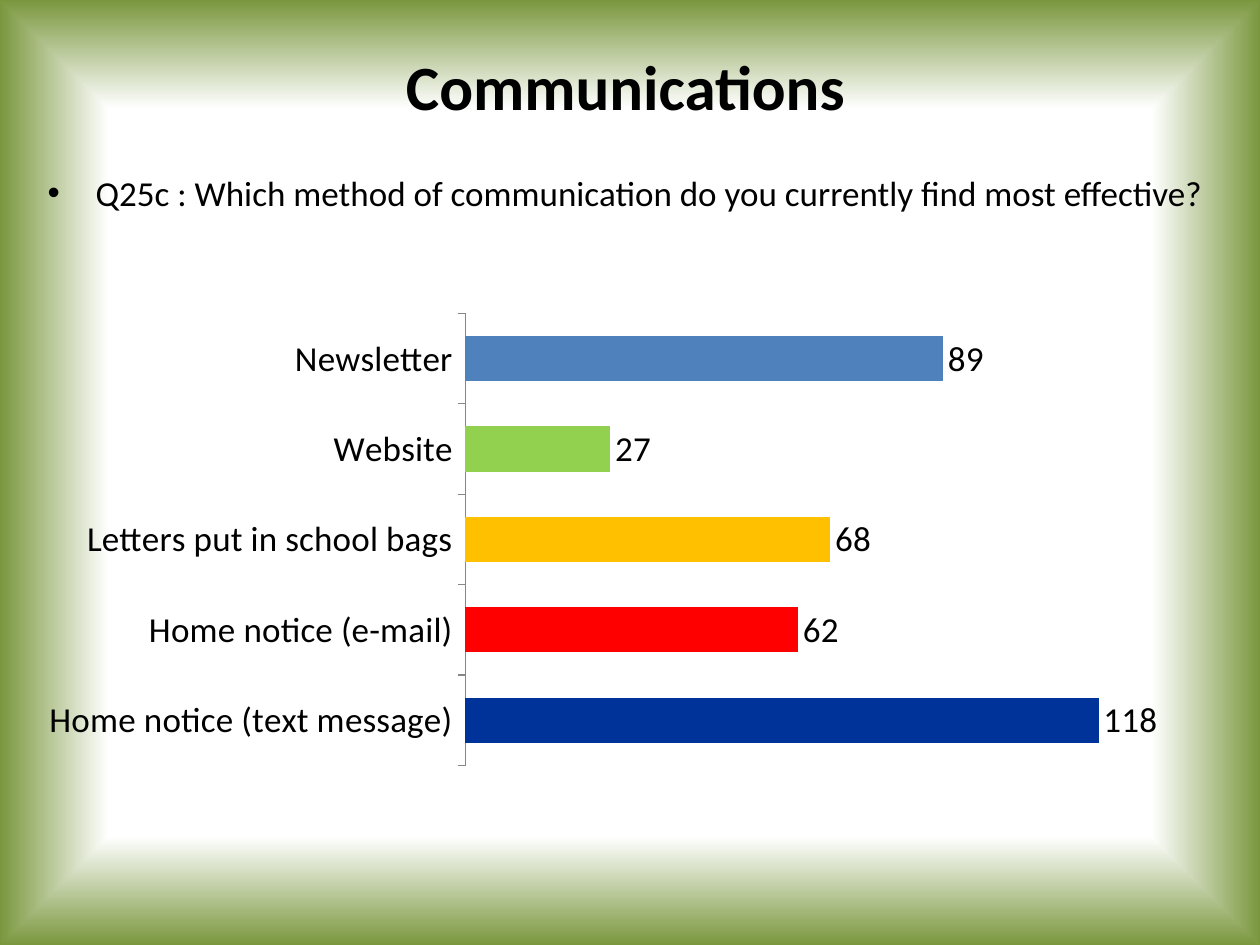
from dataclasses import dataclass

from pptx import Presentation
from pptx.chart.data import CategoryChartData
from pptx.dml.color import RGBColor
from pptx.enum.chart import XL_CHART_TYPE, XL_LABEL_POSITION, XL_TICK_MARK
from pptx.enum.text import MSO_ANCHOR, PP_ALIGN
from pptx.oxml import parse_xml
from pptx.oxml.ns import nsdecls, qn
from pptx.util import Emu, Pt


@dataclass(frozen=True)
class Theme:
    """Hold the colours, font and type sizes."""
    face: str = "Calibri"
    ink: str = "000000"
    paper: str = "FFFFFF"
    edge: str = "7A973E"
    axis: str = "878787"
    bar: str = "4F81BD"
    head: int = 36
    text: int = 20


THEME = Theme()
METHODS = [
    ("Home notice (text message)", 118, "003399"),
    ("Home notice (e-mail)", 62, "FF0000"),
    ("Letters put in school bags", 68, "FFC000"),
    ("Website", 27, "92D050"),
    ("Newsletter", 89, THEME.bar),
]


def px(count):
    """Turn pixels into EMU."""
    return Emu(round(count * 914400 / 126))


def place(shape, box):
    """Move a shape into a box."""
    shape.left, shape.top, shape.width, shape.height = map(px, box)


def style(font, size, bold=False):
    """Apply the theme to a font."""
    font.name = THEME.face
    font.size = Pt(size)
    font.bold = bold
    font.color.rgb = RGBColor.from_string(THEME.ink)


def paint(slide):
    """Fill the background with a glow from the centre."""
    fill = slide.background.fill
    fill.gradient()
    stops = zip(fill.gradient_stops, (0.77, 1), (THEME.paper, THEME.edge))
    for stop, spot, tint in stops:
        stop.position = spot
        stop.color.rgb = RGBColor.from_string(tint)
    line = next(slide.element.iter(qn("a:lin")))
    glow = parse_xml(
        f'<a:path {nsdecls("a")} path="shape">'
        '<a:fillToRect l="50000" t="50000" r="50000" b="50000"/></a:path>')
    line.getparent().replace(line, glow)


def add_title(slide, box, text):
    """Fill the title placeholder."""
    title = slide.shapes.title
    place(title, box)
    frame = title.text_frame
    frame.text = text
    frame.vertical_anchor = MSO_ANCHOR.MIDDLE
    para = frame.paragraphs[0]
    para.alignment = PP_ALIGN.CENTER
    style(para.runs[0].font, THEME.head, True)


def add_body(slide, box, text):
    """Fill the body placeholder with one bullet."""
    body = slide.placeholders[1]
    place(body, box)
    frame = body.text_frame
    frame.text = text
    para = frame.paragraphs[0]
    para.alignment = PP_ALIGN.JUSTIFY
    para.space_before = Pt(0)
    props = para._p.get_or_add_pPr()
    props.set("marL", str(px(48)))
    props.set("indent", str(-px(48)))
    props.append(parse_xml(f'<a:buChar {nsdecls("a")} char="•"/>'))
    style(para.runs[0].font, THEME.text)


def add_bars(slide, box, rows):
    """Draw the bar chart with one colour for each row."""
    names, counts, tints = zip(*rows)
    data = CategoryChartData()
    data.categories = names
    data.add_series("Series 1", counts)
    chart = slide.shapes.add_chart(
        XL_CHART_TYPE.BAR_CLUSTERED, *map(px, box), data).chart
    chart.has_legend = False
    chart.has_title = False
    style(chart.font, THEME.text)

    scale = chart.value_axis
    scale.visible = False
    scale.has_major_gridlines = False
    scale.minimum_scale, scale.maximum_scale = 0, 140
    axis = chart.category_axis
    axis.major_tick_mark = XL_TICK_MARK.OUTSIDE
    axis.format.line.color.rgb = RGBColor.from_string(THEME.axis)

    plot = chart.plots[0]
    plot.gap_width = 100
    plot.vary_by_categories = False
    plot.has_data_labels = True
    labels = plot.data_labels
    labels.show_value = True
    labels.position = XL_LABEL_POSITION.OUTSIDE_END
    style(labels.font, THEME.text)

    bars = plot.series[0]
    bars.format.fill.solid()
    bars.format.fill.fore_color.rgb = RGBColor.from_string(THEME.bar)
    for spot, tint in enumerate(tints):
        if tint != THEME.bar:
            fill = bars.points[spot].format.fill
            fill.solid()
            fill.fore_color.rgb = RGBColor.from_string(tint)


def main():
    """Build and save the slide."""
    deck = Presentation()
    deck.slide_width, deck.slide_height = px(1260), px(945)
    slide = deck.slides.add_slide(deck.slide_layouts[1])
    paint(slide)
    add_title(slide, (25, 16, 1201, 139), "Communications")
    add_body(slide, (35, 165, 1191, 714),
             "Q25c : Which method of communication do you currently find "
             "most effective?")
    add_bars(slide, (25, 304, 1216, 471), METHODS)
    deck.save("out.pptx")


if __name__ == "__main__":
    main()
